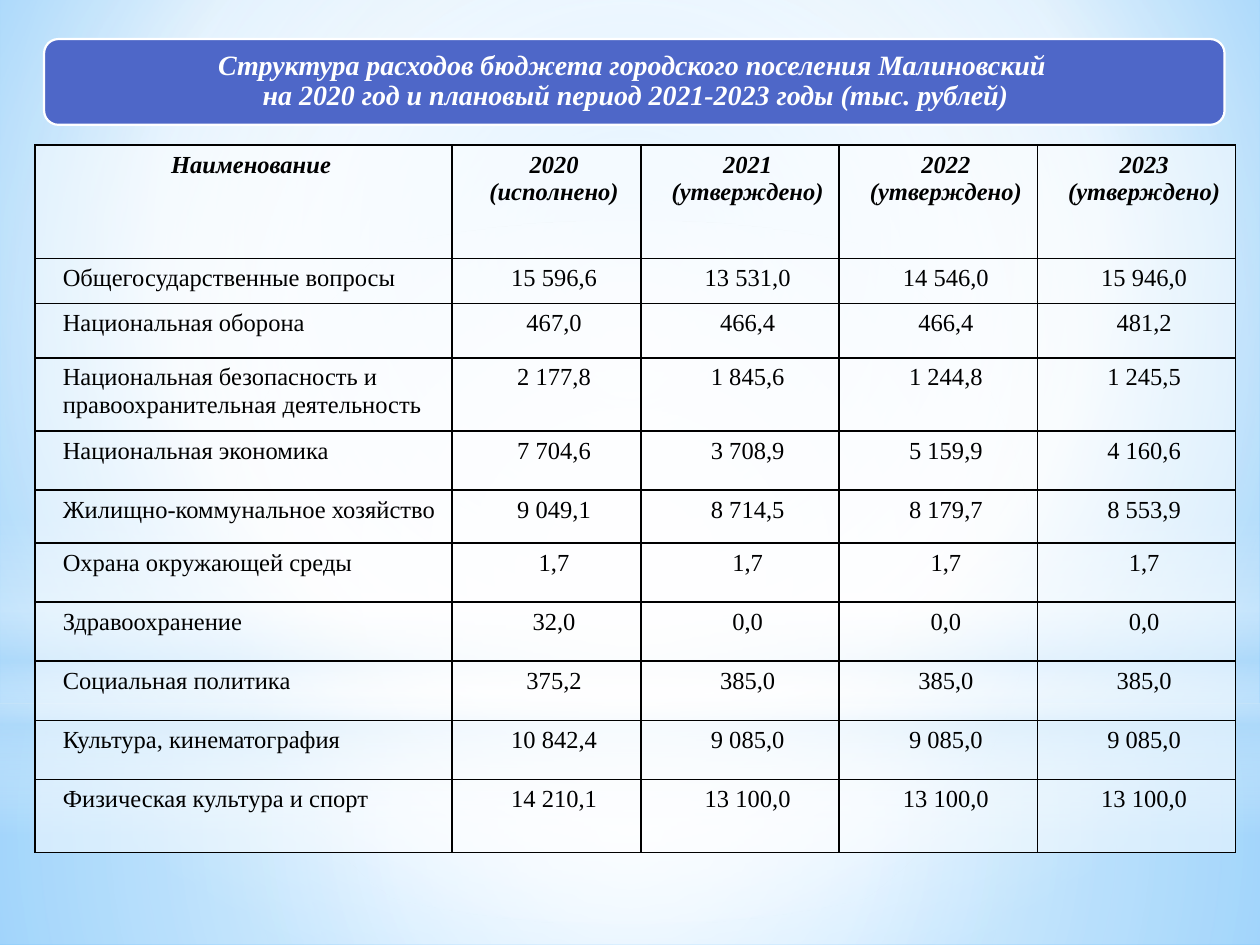
from lxml.etree import SubElement
from pptx import Presentation
from pptx.dml.color import RGBColor
from pptx.enum.shapes import MSO_SHAPE as Preset
from pptx.enum.text import MSO_ANCHOR as Anchor, PP_ALIGN as Align
from pptx.oxml import parse_xml
from pptx.oxml.ns import nsdecls, qn
from pptx.util import Pt

FONT = "Times New Roman"
TITLE = ("Структура расходов бюджета городского поселения Малиновский \v"
         "на 2020 год и плановый период 2021-2023 годы (тыс. рублей)")
COLUMN_WIDTHS = [238.3, 108] + [113.3] * 3
ROW_HEIGHTS = [64.8, 25.9, 31, 41.8, 33.8, 30.2] + [33.8] * 4 + [41.8]
BUDGET = [
    ("Наименование", "2020 (исполнено)", "2021 (утверждено)", "2022 (утверждено)", "2023 (утверждено)"),
    ("Общегосударственные вопросы", "15 596,6", "13 531,0", "14 546,0", "15 946,0"),
    ("Национальная оборона", "467,0", "466,4", "466,4", "481,2"),
    ("Национальная безопасность и правоохранительная деятельность",
     "2 177,8", "1 845,6", "1 244,8", "1 245,5"),
    ("Национальная экономика", "7 704,6", "3 708,9", "5 159,9", "4 160,6"),
    ("Жилищно-коммунальное хозяйство", "9 049,1", "8 714,5", "8 179,7", "8 553,9"),
    ("Охрана окружающей среды", "1,7", "1,7", "1,7", "1,7"),
    ("Здравоохранение", "32,0", "0,0", "0,0", "0,0"),
    ("Социальная политика", "375,2", "385,0", "385,0", "385,0"),
    ("Культура, кинематография", "10 842,4", "9 085,0", "9 085,0", "9 085,0"),
    ("Физическая культура и спорт", "14 210,1", "13 100,0", "13 100,0", "13 100,0"),
]
WHITE, BLACK, PALE_BLUE = "FFFFFF", "000000", "B4DCFA"
LINEAR = '<a:lin ang="5400000" scaled="0"/>'


def color(value):
    """Return the colour for a hex string."""
    return RGBColor.from_string(value)


def circular(left, top, right, bottom):
    """Return a circular gradient path closing on the given percent insets."""
    return (f'<a:path path="circle"><a:fillToRect l="{left * 1000}" t="{top * 1000}" '
            f'r="{right * 1000}" b="{bottom * 1000}"/></a:path>')


def set_gradient(properties, stops, direction):
    """Replace a solid fill by stops of (position, colour, opacity) in percent."""
    stop_xml = "".join(
        f'<a:gs pos="{position * 1000}"><a:srgbClr val="{value}">'
        f'<a:alpha val="{opacity * 1000}"/></a:srgbClr></a:gs>'
        for position, value, opacity in stops)
    gradient = parse_xml(f'<a:gradFill {nsdecls("a")} rotWithShape="1">'
                         f'<a:gsLst>{stop_xml}</a:gsLst>{direction}</a:gradFill>')
    properties.replace(properties.find(qn("a:solidFill")), gradient)


def set_background(slide, stops, direction):
    """Give the slide a gradient background."""
    slide.background.fill.solid()
    set_gradient(slide.element.find(".//" + qn("p:bgPr")), stops, direction)


def add_shape(shapes, preset, box, fill):
    """Add a filled shape without line or shadow."""
    shape = shapes.add_shape(preset, *map(Pt, box))
    shape.shadow.inherit = False
    shape.fill.solid()
    shape.fill.fore_color.rgb = color(fill)
    shape.line.fill.background()
    return shape


def add_glow(slide, preset, box, stops, direction):
    """Add a translucent gradient layer of the backdrop."""
    shape = add_shape(slide.shapes, preset, box, WHITE)
    set_gradient(shape.element.spPr, stops, direction)


def style_paragraph(paragraph, size, value, emphasis, alignment):
    """Set the font and alignment of a paragraph."""
    paragraph.alignment = alignment
    font = paragraph.font
    font.name, font.size, font.color.rgb = FONT, Pt(size), color(value)
    font.bold = font.italic = emphasis


def add_title(slide):
    """Add the rounded banner with the slide title."""
    group = slide.shapes.add_group_shape()
    banner = add_shape(group.shapes, Preset.ROUNDED_RECTANGLE, (25.2, 22.3, 674.6, 49), "4E67C8")
    banner.line.color.rgb = color(WHITE)
    banner.line.width = Pt(1.25)
    frame = group.shapes.add_textbox(*map(Pt, (28, 24.5, 670.3, 44))).text_frame
    frame.word_wrap = True
    frame.vertical_anchor = Anchor.MIDDLE
    frame.margin_left = frame.margin_right = frame.margin_top = frame.margin_bottom = Pt(5)
    frame.text = TITLE
    paragraph = frame.paragraphs[0]
    paragraph.line_spacing = 0.9
    style_paragraph(paragraph, 16, WHITE, True, Align.CENTER)


def style_cell(cell):
    """Give a cell a half-transparent white fill and black borders."""
    cell.fill.solid()
    cell.fill.fore_color.rgb = color(WHITE)
    properties = cell._tc.get_or_add_tcPr()
    SubElement(properties.find(".//" + qn("a:srgbClr")), qn("a:alpha"), val="50000")
    for index, side in enumerate("LRTB"):
        properties.insert(index, parse_xml(
            f'<a:ln{side} {nsdecls("a")} w="{Pt(1)}"><a:solidFill>'
            f'<a:srgbClr val="{BLACK}"/></a:solidFill></a:ln{side}>'))


def add_budget_table(slide):
    """Add the table of expenses by section and year."""
    table = slide.shapes.add_table(
        len(BUDGET), len(COLUMN_WIDTHS), Pt(20), Pt(82.8),
        Pt(sum(COLUMN_WIDTHS)), Pt(sum(ROW_HEIGHTS))).table
    table.first_row = table.horz_banding = False
    for column, width in zip(table.columns, COLUMN_WIDTHS):
        column.width = Pt(width)
    for row_index, (row, height, texts) in enumerate(zip(table.rows, ROW_HEIGHTS, BUDGET)):
        row.height = Pt(height)
        for column_index, (cell, text) in enumerate(zip(row.cells, texts)):
            is_header = row_index == 0
            is_name = column_index == 0 and not is_header
            cell.text = text
            style_cell(cell)
            paragraph = cell.text_frame.paragraphs[0]
            paragraph.space_before = Pt(4)
            style_paragraph(paragraph, 14, BLACK, is_header, Align.LEFT if is_name else Align.CENTER)
            indents = paragraph._p.get_or_add_pPr()
            indents.set("marL", str(Pt(8.64)))
            indents.set("indent", "0")


def main():
    """Build the budget slide."""
    presentation = Presentation()
    presentation.slide_width, presentation.slide_height = Pt(720), Pt(540)
    slide = presentation.slides.add_slide(presentation.slide_layouts[6])
    centre = circular(50, 50, 50, 50)
    set_background(slide, [(0, "9ED5FF", 100), (60, WHITE, 100), (100, "5BB9FF", 100)],
                   circular(20, 10, 20, 60))
    add_glow(slide, Preset.RECTANGLE, (0, 401.8, 720, 138.2),
             [(0, WHITE, 91), (37, WHITE, 76), (100, PALE_BLUE, 79)], centre)
    add_glow(slide, Preset.RECTANGLE, (0, 0, 720, 401.8),
             [(0, WHITE, 89), (48, WHITE, 62), (100, PALE_BLUE, 79)], centre)
    add_glow(slide, Preset.RECTANGLE, (0, 296.6, 720, 180),
             [(0, WHITE, 0), (29, WHITE, 30), (45, PALE_BLUE, 40),
              (55, WHITE, 26), (65, PALE_BLUE, 60), (100, WHITE, 0)], LINEAR)
    add_glow(slide, Preset.OVAL, (0, 126, 720, 401.8),
             [(0, WHITE, 100), (56, WHITE, 0)], centre)
    add_title(slide)
    add_budget_table(slide)
    presentation.save("out.pptx")


if __name__ == "__main__":
    main()
